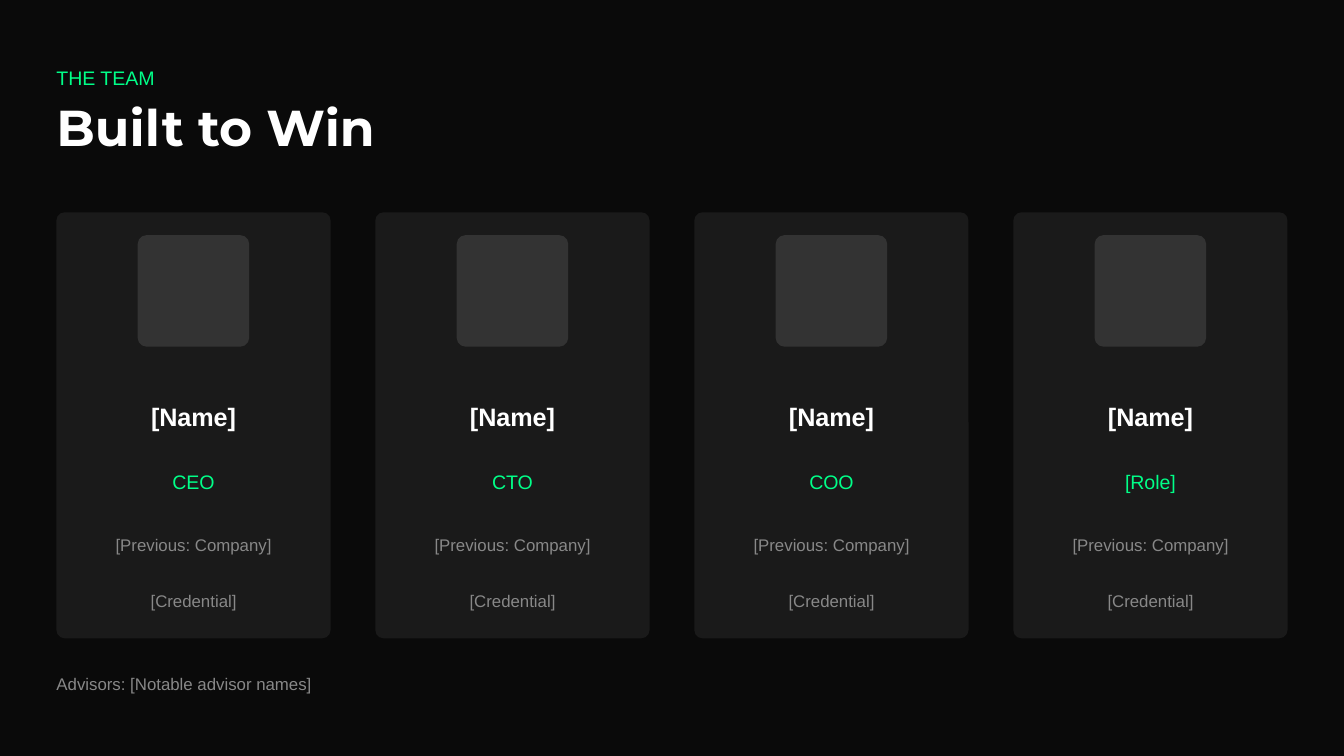
from dataclasses import dataclass

from pptx import Presentation
from pptx.dml.color import RGBColor
from pptx.enum.shapes import MSO_SHAPE
from pptx.enum.text import MSO_ANCHOR, MSO_AUTO_SIZE, PP_ALIGN
from pptx.shapes.base import BaseShape
from pptx.slide import Slide
from pptx.util import Inches, Pt

BACKGROUND, CARD, PORTRAIT = "0A0A0A", "1A1A1A", "333333"
GREEN, WHITE, GRAY = "00FF88", "FFFFFF", "888888"

SLIDE_WIDTH = 10
SLIDE_HEIGHT = SLIDE_WIDTH * 9 / 16
MARGIN = 0.42
TEXT_WIDTH = 9.35
CARD_TOP, CARD_WIDTH, CARD_HEIGHT = 1.58, 2.04, 3.17
PORTRAIT_TOP, PORTRAIT_SIZE = 1.75, 0.83


@dataclass(frozen=True)
class TextStyle:
    size: float
    line_spacing: float
    color: str
    bold: bool = False
    font: str = "Arial"


@dataclass(frozen=True)
class Box:
    left: float
    top: float
    width: float
    height: float


@dataclass(frozen=True)
class Member:
    role: str
    role_width: float


@dataclass(frozen=True)
class CardLine:
    text: str
    top: float
    width: float
    height: float
    style: TextStyle


TITLE = TextStyle(27, 30, WHITE, bold=True, font="Montserrat")
NAME = TextStyle(13.5, 21, WHITE, bold=True)
ACCENT = TextStyle(10.5, 15, GREEN)
DETAIL = TextStyle(9, 12, GRAY)

MEMBERS = [
    Member("CEO", 0.32),
    Member("CTO", 0.31),
    Member("COO", 0.34),
    Member("[Role]", 0.39),
]


def rgb(color: str) -> RGBColor:
    return RGBColor.from_string(color)


def place(shape: BaseShape, box: Box) -> None:
    shape.left, shape.top = Inches(box.left), Inches(box.top)
    shape.width, shape.height = Inches(box.width), Inches(box.height)


def write(shape: BaseShape, text: str, style: TextStyle,
          alignment: PP_ALIGN = PP_ALIGN.LEFT, wrap: bool = True) -> None:
    frame = shape.text_frame
    frame.margin_left = frame.margin_top = 0
    frame.margin_right = frame.margin_bottom = 0
    frame.word_wrap = wrap
    frame.auto_size = MSO_AUTO_SIZE.NONE
    frame.vertical_anchor = MSO_ANCHOR.TOP
    paragraph = frame.paragraphs[0]
    paragraph.alignment = alignment
    paragraph.line_spacing = Pt(style.line_spacing)
    paragraph.space_before = paragraph.space_after = Pt(0)
    run = paragraph.add_run()
    run.text = text
    run.font.name = style.font
    run.font.size = Pt(style.size)
    run.font.bold = style.bold
    run.font.color.rgb = rgb(style.color)


def add_text(slide: Slide, box: Box, text: str, style: TextStyle,
             alignment: PP_ALIGN = PP_ALIGN.LEFT, wrap: bool = True) -> None:
    shape = slide.shapes.add_textbox(0, 0, 0, 0)
    place(shape, box)
    write(shape, text, style, alignment, wrap)


def add_panel(slide: Slide, box: Box, color: str, rounding: float) -> None:
    shape = slide.shapes.add_shape(MSO_SHAPE.ROUNDED_RECTANGLE, 0, 0, 0, 0)
    place(shape, box)
    shape.adjustments[0] = rounding
    shape.shadow.inherit = False
    shape.fill.solid()
    shape.fill.fore_color.rgb = rgb(color)
    shape.line.fill.background()


def add_member_card(slide: Slide, left: float, member: Member) -> None:
    center = left + CARD_WIDTH / 2
    add_panel(slide, Box(left, CARD_TOP, CARD_WIDTH, CARD_HEIGHT), CARD, 0.03)
    add_panel(slide, Box(center - PORTRAIT_SIZE / 2, PORTRAIT_TOP,
                         PORTRAIT_SIZE, PORTRAIT_SIZE), PORTRAIT, 0.08)
    lines = [
        CardLine("[Name]", 2.92, 0.65, 0.29, NAME),
        CardLine(member.role, 3.46, member.role_width, 0.21, ACCENT),
        CardLine("[Previous: Company]", 3.96, 1.18, 0.17, DETAIL),
        CardLine("[Credential]", 4.38, 0.65, 0.17, DETAIL),
    ]
    for line in lines:
        box = Box(center - line.width / 2, line.top, line.width, line.height)
        add_text(slide, box, line.text, line.style, PP_ALIGN.CENTER, wrap=False)


def main() -> None:
    presentation = Presentation()
    presentation.slide_width = Inches(SLIDE_WIDTH)
    presentation.slide_height = Inches(SLIDE_HEIGHT)
    slide = presentation.slides.add_slide(presentation.slide_layouts[5])
    slide.background.fill.solid()
    slide.background.fill.fore_color.rgb = rgb(BACKGROUND)

    add_text(slide, Box(MARGIN, 0.46, TEXT_WIDTH, 0.21), "THE TEAM", ACCENT)
    title = slide.shapes.title
    place(title, Box(MARGIN, 0.75, 4.69, 0.42))
    write(title, "Built to Win", TITLE)

    pitch = (SLIDE_WIDTH - 2 * MARGIN - CARD_WIDTH) / (len(MEMBERS) - 1)
    for index, member in enumerate(MEMBERS):
        add_member_card(slide, MARGIN + index * pitch, member)

    add_text(slide, Box(MARGIN, 5, TEXT_WIDTH, 0.17),
             "Advisors: [Notable advisor names]", DETAIL)
    presentation.save("out.pptx")


if __name__ == "__main__":
    main()
